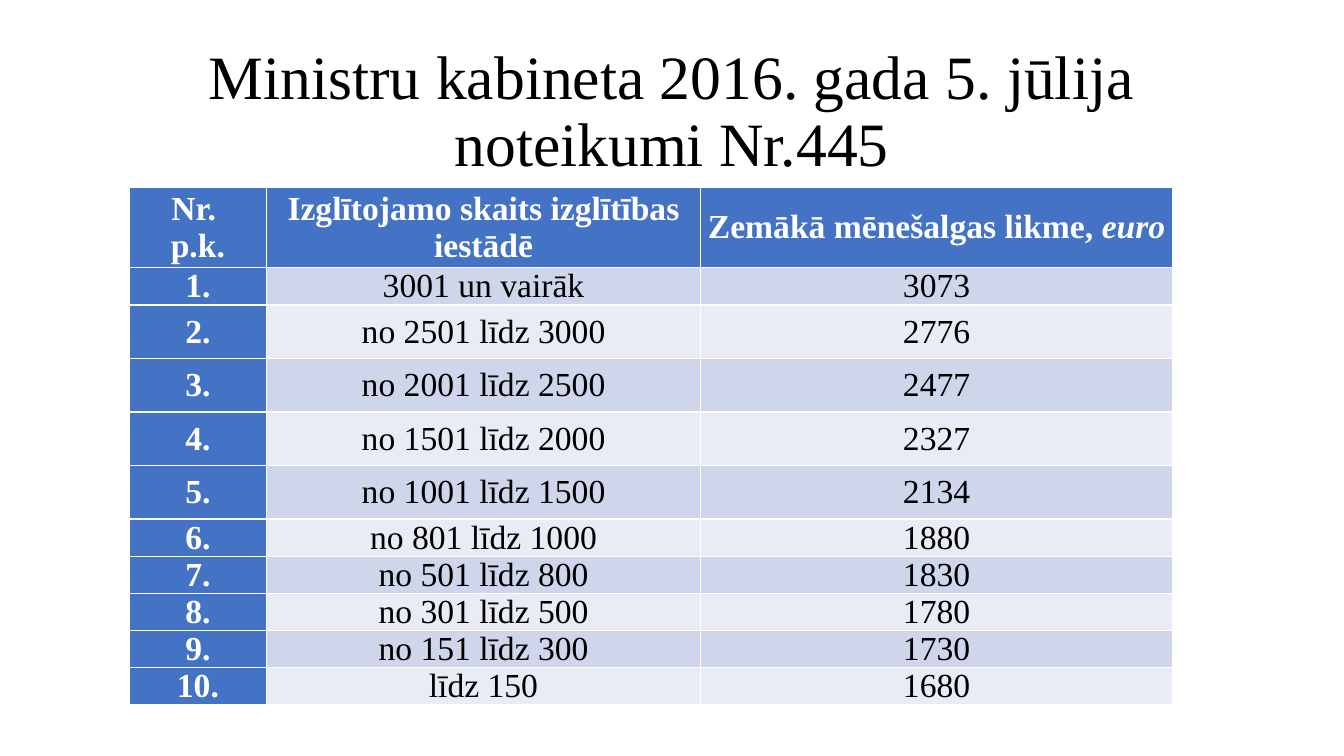
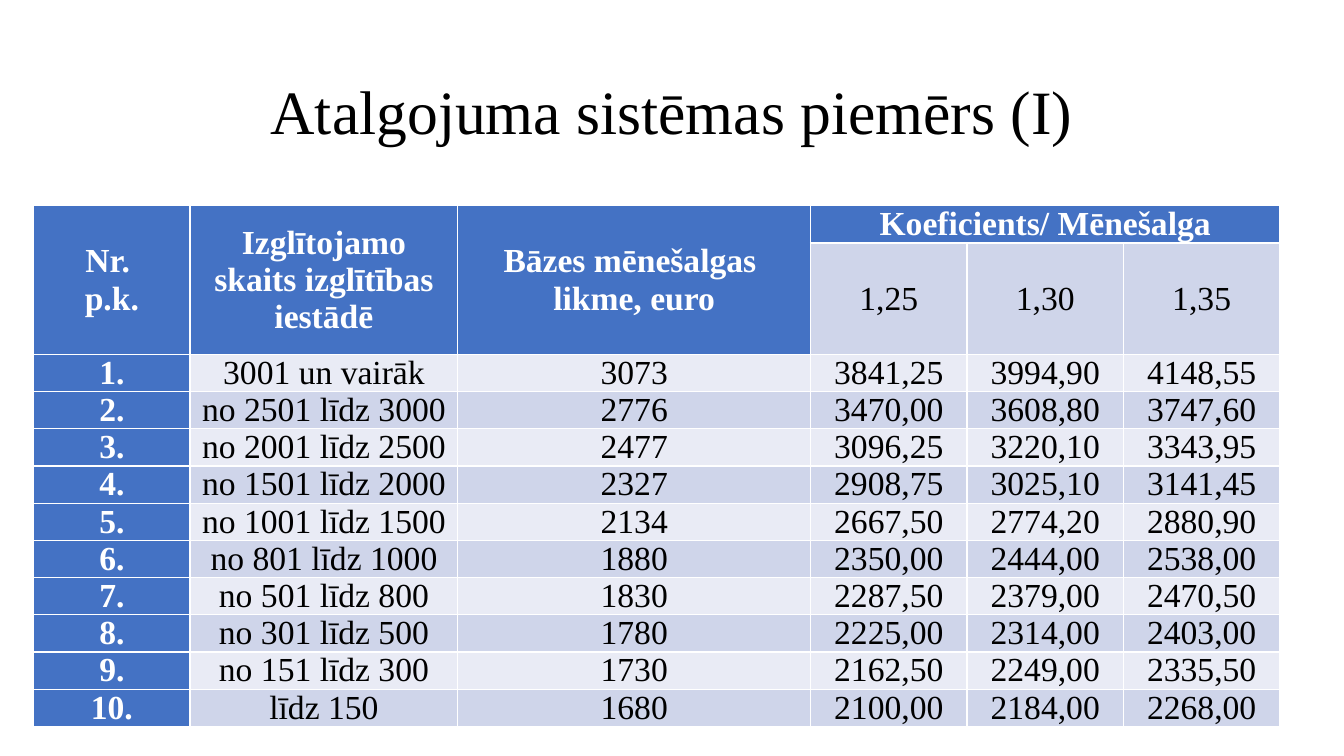
from pptx import Presentation
from pptx.dml.color import RGBColor
from pptx.enum.text import MSO_ANCHOR, PP_ALIGN
from pptx.util import Pt

EMU_PER_PX = 9525
FONT = "Times New Roman"
COLORS = {
    "header": "4472C4",
    "header_text": "FFFFFF",
    "text": "000000",
    "band_dark": "CFD5EA",
    "band_light": "E9EBF5",
}
TITLE_SIZE = 44
TABLE_SIZE = 24
CELL_MARGIN = 7
LOW_ROW = 35
HIGH_ROW = 51

NUMBER_HEADING = "Nr. \np.k."
PUPILS_HEADING = "Izglītojamo skaits izglītības iestādē"
RATES = [
    ("3001 un vairāk", 3073),
    ("no 2501 līdz 3000", 2776),
    ("no 2001 līdz 2500", 2477),
    ("no 1501 līdz 2000", 2327),
    ("no 1001 līdz 1500", 2134),
    ("no 801 līdz 1000", 1880),
    ("no 501 līdz 800", 1830),
    ("no 301 līdz 500", 1780),
    ("no 151 līdz 300", 1730),
    ("līdz 150", 1680),
]
COEFFICIENTS = [1.25, 1.30, 1.35]


def px(length):
    return length * EMU_PER_PX


def color(name):
    return RGBColor.from_string(COLORS[name])


def decimal(value):
    """Two decimals with a decimal comma."""
    return f"{value:.2f}".replace(".", ",")


def format_paragraph(paragraph, size, color_name, bold=False):
    paragraph.alignment = PP_ALIGN.CENTER
    for run in paragraph.runs:
        run.font.name = FONT
        run.font.size = Pt(size)
        run.font.bold = bold
        run.font.color.rgb = color(color_name)


def add_titled_slide(presentation, text, left, top, width, height):
    slide = presentation.slides.add_slide(presentation.slide_layouts[5])
    title = slide.shapes.title
    title.left, title.top = px(left), px(top)
    title.width, title.height = px(width), px(height)
    frame = title.text_frame
    frame.text = text
    frame.word_wrap = True
    frame.vertical_anchor = MSO_ANCHOR.MIDDLE
    paragraph = frame.paragraphs[0]
    paragraph.line_spacing = 0.9
    format_paragraph(paragraph, TITLE_SIZE, "text")
    return slide


def format_cell(cell, row, column):
    """Style a cell as heading (first row or column) or as banded body."""
    heading = row == 0 or column == 0
    band = "band_dark" if row % 2 else "band_light"
    cell.fill.solid()
    cell.fill.fore_color.rgb = color("header" if heading else band)
    cell.vertical_anchor = MSO_ANCHOR.MIDDLE
    cell.margin_left = cell.margin_right = px(CELL_MARGIN)
    cell.margin_top = cell.margin_bottom = 0
    for paragraph in cell.text_frame.paragraphs:
        format_paragraph(paragraph, TABLE_SIZE,
                         "header_text" if heading else "text", heading)


def add_rate_table(slide, left, top, widths, heights, rows):
    frame = slide.shapes.add_table(len(rows), len(widths), px(left), px(top),
                                   px(sum(widths)), px(sum(heights)))
    table = frame.table
    table.first_col = True
    for column, width in zip(table.columns, widths):
        column.width = px(width)
    for row, height in zip(table.rows, heights):
        row.height = px(height)
    for row_index, texts in enumerate(rows):
        for column_index, text in enumerate(texts):
            cell = table.cell(row_index, column_index)
            cell.text_frame.text = text
            format_cell(cell, row_index, column_index)
    return table


def add_regulation_slide(presentation):
    slide = add_titled_slide(
        presentation, "Ministru kabineta 2016. gada 5. jūlija noteikumi Nr.445",
        88, 38, 1104, 139)
    rows = [[NUMBER_HEADING, PUPILS_HEADING, "Zemākā mēnešalgas likme, "]]
    for number, (pupils, rate) in enumerate(RATES, 1):
        rows.append([f"{number}.", pupils, str(rate)])
    heights = [77, LOW_ROW] + [HIGH_ROW] * 4 + [LOW_ROW] * 5
    table = add_rate_table(slide, 123, 178, [131, 413, 450], heights, rows)

    rate_heading = table.cell(0, 2)
    currency = rate_heading.text_frame.paragraphs[0].add_run()
    currency.text = "euro"
    currency.font.italic = True
    format_cell(rate_heading, 0, 2)


def add_example_slide(presentation):
    slide = add_titled_slide(presentation, "Atalgojuma sistēmas piemērs (I)",
                             60, 40, 1160, 139)
    rows = [
        [NUMBER_HEADING, PUPILS_HEADING, "Bāzes mēnešalgas \nlikme, euro",
         "Koeficients/ Mēnešalga", "", ""],
        ["", "", ""] + [decimal(value) for value in COEFFICIENTS],
    ]
    for number, (pupils, rate) in enumerate(RATES, 1):
        salaries = [decimal(rate * value) for value in COEFFICIENTS]
        rows.append([f"{number}.", pupils, str(rate)] + salaries)
    heights = [LOW_ROW, 106] + [LOW_ROW] * len(RATES)
    table = add_rate_table(slide, 32, 196, [149, 255, 336] + [149] * 3,
                           heights, rows)
    for column in range(3):
        table.cell(0, column).merge(table.cell(1, column))
    table.cell(0, 3).merge(table.cell(0, 5))


def main():
    presentation = Presentation()
    presentation.slide_width = px(1280)
    presentation.slide_height = px(720)
    add_regulation_slide(presentation)
    add_example_slide(presentation)
    presentation.save("out.pptx")


if __name__ == "__main__":
    main()
